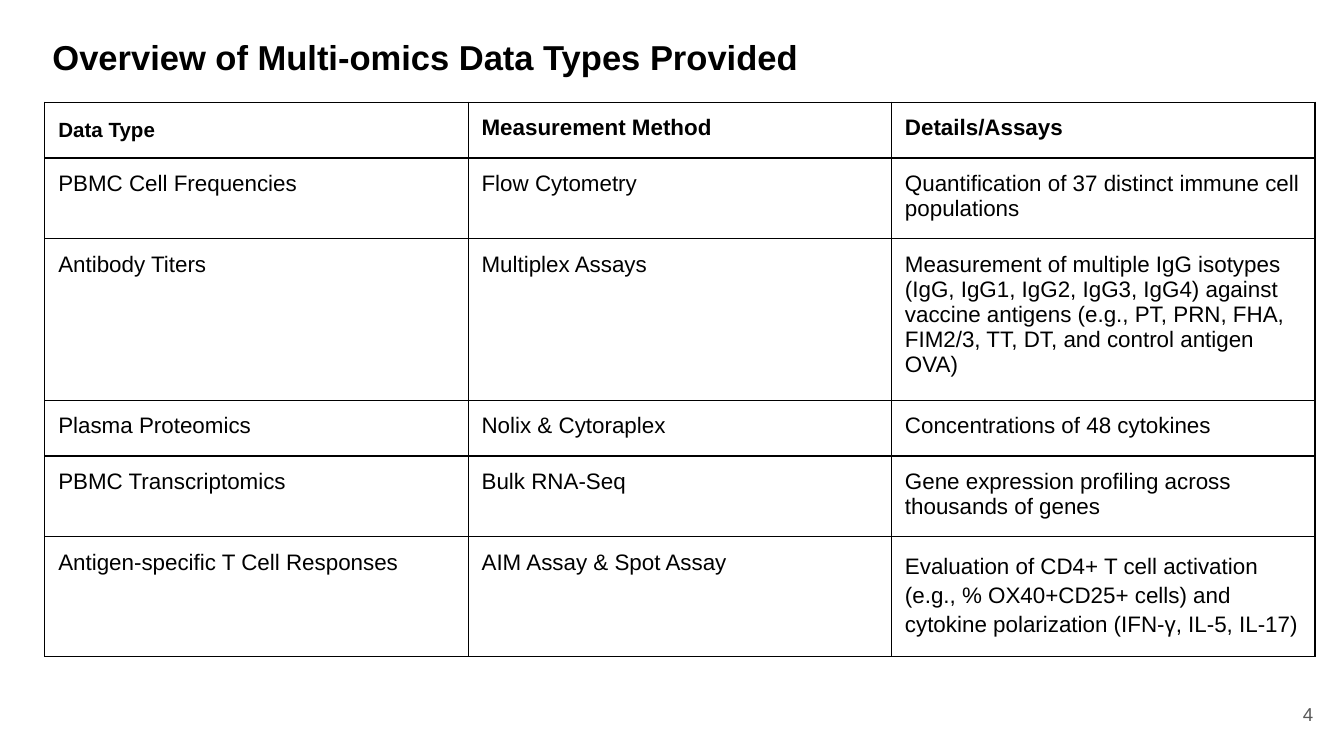
from pptx import Presentation
from pptx.dml.color import RGBColor
from pptx.enum.text import MSO_ANCHOR as Anchor, PP_ALIGN as Align
from pptx.oxml import parse_xml
from pptx.oxml.ns import nsdecls
from pptx.util import Pt

# Content
TITLE = "Overview of Multi-omics Data Types Provided"
PAGE = "4"
ROWS = [
    ("Data Type", "Measurement Method", "Details/Assays"),
    ("PBMC Cell Frequencies", "Flow Cytometry",
     "Quantification of 37 distinct immune cell populations"),
    ("Antibody Titers", "Multiplex Assays",
     "Measurement of multiple IgG isotypes (IgG, IgG1, IgG2, IgG3, IgG4) against "
     "vaccine antigens (e.g., PT, PRN, FHA, FIM2/3, TT, DT, and control antigen OVA)"),
    ("Plasma Proteomics", "Nolix & Cytoraplex", "Concentrations of 48 cytokines"),
    ("PBMC Transcriptomics", "Bulk RNA-Seq",
     "Gene expression profiling across thousands of genes"),
    ("Antigen-specific T Cell Responses", "AIM Assay & Spot Assay",
     "Evaluation of CD4+ T cell activation (e.g., % OX40+CD25+ cells) and "
     "cytokine polarization (IFN-γ, IL-5, IL-17)"),
]
LOOSE_CELLS = {(0, 0), (5, 2)}  # cells with wider line spacing

# Style and layout, in points
FONT, BLACK, GREY = "Arial", "000000", "595959"
LOOSE, INSET, BORDER = 1.15, 7.2, 0.75
LEFT, TOP, COL_W, ROW_H = 24, 54.7, 226.8, 30


def rgb(color):
    return RGBColor.from_string(color)


def write(tf, text, size, color=BLACK, bold=False, spacing=None, align=Align.LEFT):
    tf.text = text
    p = tf.paragraphs[0]
    p.alignment = align
    if spacing:
        p.line_spacing = spacing
    r = p.runs[0]
    font = r.font
    font.name, font.size, font.bold = FONT, Pt(size), bold
    font.color.rgb = rgb(color)
    # Same typeface for the other scripts, so line heights agree
    for tag in ("ea", "cs"):
        r._r.get_or_add_rPr().append(
            parse_xml(f'<a:{tag} {nsdecls("a")} typeface="{FONT}"/>'))


def set_insets(box):
    box.margin_left = box.margin_right = Pt(INSET)
    box.margin_top = box.margin_bottom = Pt(INSET)


def add_text(x, y, w, h, text, size, anchor=Anchor.TOP, **style):
    tf = slide.shapes.add_textbox(Pt(x), Pt(y), Pt(w), Pt(h)).text_frame
    tf.word_wrap = True
    tf.vertical_anchor = anchor
    set_insets(tf)
    write(tf, text, size, **style)


def add_borders(cell):
    tcPr = cell._tc.get_or_add_tcPr()
    for i, side in enumerate(("lnL", "lnR", "lnT", "lnB")):
        tcPr.insert(i, parse_xml(
            f'<a:{side} {nsdecls("a")} w="{Pt(BORDER)}"><a:solidFill>'
            f'<a:srgbClr val="{BLACK}"/></a:solidFill></a:{side}>'))


prs = Presentation()
prs.slide_width, prs.slide_height = Pt(720), Pt(405)
slide = prs.slides.add_slide(prs.slide_layouts[6])

# Title
add_text(21, 8.6, 671, 45.4, TITLE, 18.5, bold=True, spacing=LOOSE)

# Table, without the default banded style
n_rows, n_cols = len(ROWS), len(ROWS[0])
table = slide.shapes.add_table(n_rows, n_cols, Pt(LEFT), Pt(TOP),
                               Pt(COL_W * n_cols), Pt(ROW_H * n_rows)).table
table.first_row = table.horz_banding = False
tblPr = table._tbl.tblPr
for style_id in list(tblPr):
    tblPr.remove(style_id)
for col in table.columns:
    col.width = Pt(COL_W)
for r, row in enumerate(ROWS):
    table.rows[r].height = Pt(ROW_H)
    for c, text in enumerate(row):
        cell = table.cell(r, c)
        cell.fill.background()
        set_insets(cell)
        add_borders(cell)
        write(cell.text_frame, text, 11 if (r, c) == (0, 0) else 12, bold=r == 0,
              spacing=LOOSE if (r, c) in LOOSE_CELLS else None)

# Page number
add_text(667.4, 367.2, 43.2, 31, PAGE, 10, Anchor.MIDDLE, color=GREY, align=Align.RIGHT)

prs.save("out.pptx")
